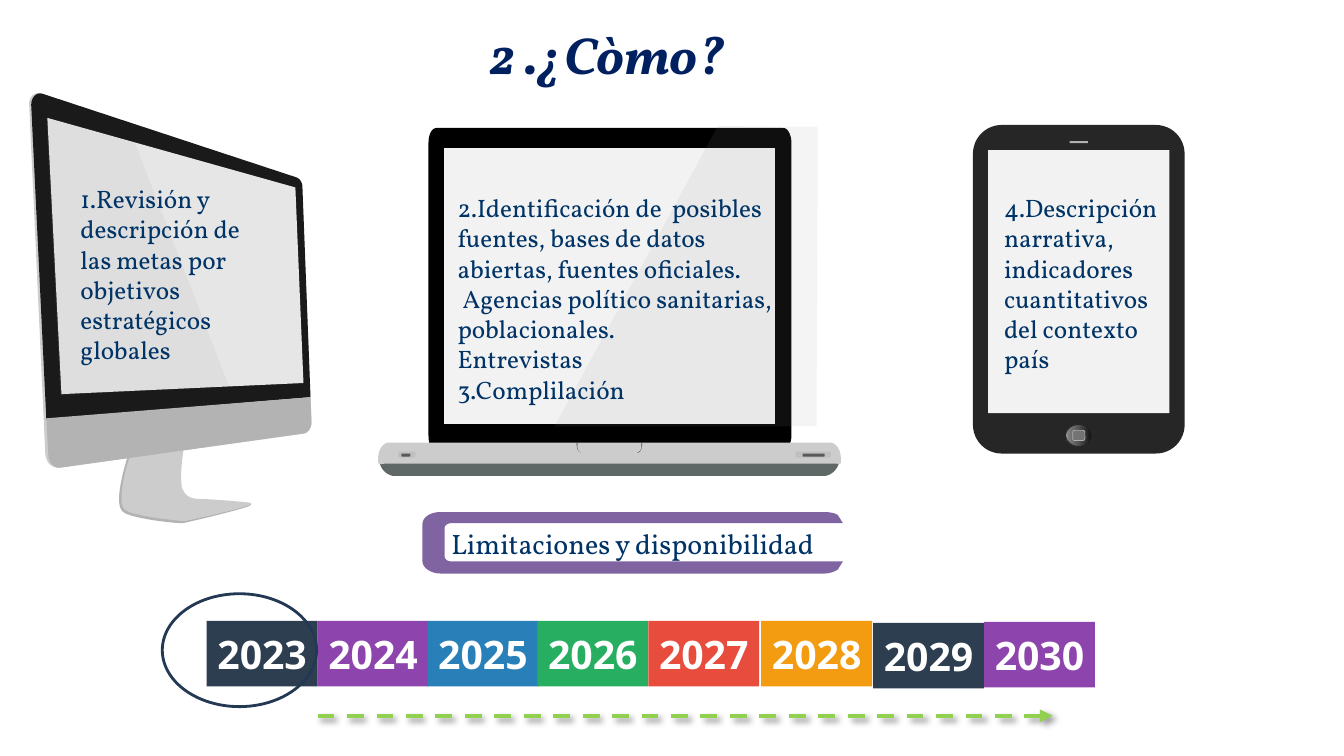
from copy import deepcopy
from pptx import Presentation
from pptx.dml.color import RGBColor
from pptx.enum.dml import MSO_LINE
from pptx.enum.shapes import MSO_CONNECTOR, MSO_SHAPE as SHAPE
from pptx.enum.text import MSO_ANCHOR as ANCHOR, MSO_AUTO_SIZE as AUTO, PP_ALIGN as ALIGN
from pptx.oxml import parse_xml
from pptx.oxml.ns import nsdecls, qn
from pptx.util import Inches, Pt

# Content
TITLE = "2 .¿Còmo?"
SERIF, SANS, NAVY = "Vollkorn", "Open Sans", "003366"
SCREENS = [  # box, paragraphs
    ((0.7, 1.77, 2.06, 1.92),
     ["1.Revisión y descripción de las metas por objetivos estratégicos globales"]),
    ((4.44, 1.86, 3.36, 2.22),
     ["2.Identificación de  posibles fuentes, bases de datos abiertas, fuentes oficiales.",
      " Agencias político sanitarias, poblacionales.", "Entrevistas", "3.Complilación"]),
    ((9.86, 1.86, 1.86, 1.92),
     ["4.Descripción narrativa, indicadores", "cuantitativos del contexto país"]),
]
YEARS = [  # year, fill, left, top
    ("2023", "2D3E50", 2.05, 6.16), ("2024", "8D44AD", 3.15, 6.16),
    ("2025", "297FB8", 4.24, 6.16), ("2026", "27AE61", 5.33, 6.16),
    ("2027", "E84C3D", 6.43, 6.16), ("2028", "F39C11", 7.55, 6.16),
    ("2029", "2D3E50", 8.66, 6.18), ("2030", "8D44AD", 9.76, 6.17),
]
BAND_TEXT = "Limitaciones y disponibilidad"
BAND = ("M 4.37 5.08 L 8.18 5.08 C 8.23 5.08 8.28 5.09 8.31 5.11 L 8.36 5.19 L 4.48 5.19 "
        "C 4.44 5.19 4.41 5.21 4.41 5.24 L 4.41 5.52 C 4.41 5.55 4.44 5.57 4.48 5.57 "
        "L 8.36 5.57 L 8.31 5.65 C 8.28 5.67 8.23 5.69 8.18 5.69 L 4.37 5.69 "
        "C 4.27 5.69 4.19 5.63 4.19 5.57 L 4.19 5.2 C 4.19 5.13 4.27 5.08 4.37 5.08")

# Device outlines in inches: M move, L line, C cubic curve
MONITOR = [  # outline, fill, opacity in percent
    ("M 1.8 4.46 C 1.78 4.62 1.77 4.71 1.78 4.8 C 1.78 4.83 1.78 4.85 1.8 4.88 "
     "C 1.83 4.95 1.91 4.97 1.95 4.97 C 2.1 4.97 2.41 4.99 2.46 4.99 "
     "C 2.46 4.99 2.5 4.99 2.49 5 L 2.49 5.01 C 2.47 5.04 1.91 5.17 1.82 5.19 "
     "C 1.81 5.19 1.8 5.19 1.79 5.19 C 1.71 5.19 1.26 5.14 1.21 5.07 "
     "C 1.14 4.99 1.21 4.72 1.26 4.55 C 1.24 4.53 1.51 4.49 1.8 4.46", "B3B3B3", 100),
    ("M 1.82 4.46 C 1.8 4.61 1.79 4.7 1.8 4.79 C 1.8 4.82 1.8 4.84 1.82 4.87 "
     "C 1.85 4.94 1.93 4.95 1.97 4.95 C 2.08 4.95 2.44 4.98 2.49 4.99 "
     "C 2.57 5.01 1.93 5.15 1.83 5.17 C 1.83 5.17 1.82 5.17 1.81 5.17 "
     "C 1.73 5.16 1.29 5.12 1.23 5.05 C 1.17 4.97 1.23 4.71 1.28 4.55 "
     "C 1.26 4.52 1.53 4.48 1.82 4.46", "CCCCCC", 100),
    ("M 0.58 4.64 L 3.02 4.3 C 3.06 4.29 3.09 4.24 3.09 4.19 L 3 1.95 "
     "C 2.99 1.81 2.97 1.77 2.93 1.76 L 0.39 0.93 C 0.34 0.91 0.28 0.97 0.29 1.04 "
     "L 0.45 4.51 C 0.46 4.59 0.51 4.64 0.58 4.64", "CCCCCC", 100),
    ("M 0.46 4.16 L 3.08 3.94 L 3 1.85 C 3 1.81 2.97 1.77 2.94 1.76 L 0.42 0.93 "
     "C 0.36 0.91 0.31 0.97 0.31 1.04 L 0.46 4.16", "1A1A1A", 100),
    ("M 0.61 3.91 L 3.01 3.8 L 2.93 1.86 L 0.47 1.17", "E6E6E6", 100),
    ("M 3.08 3.94 L 3.09 4.19 C 3.09 4.24 3.06 4.29 3.02 4.3 L 0.6 4.64 "
     "C 0.54 4.65 0.48 4.59 0.48 4.51 L 0.46 4.15", "B3B3B3", 100),
    ("M 1.34 1.42 L 0.46 1.17 L 0.6 3.92 L 2.27 3.83", "999999", 10),
]
LAPTOP = [
    ("M 8.19 4.72 C 8.19 4.72 8.28 4.71 8.32 4.6 C 8.32 4.57 8.3 4.54 8.27 4.54 "
     "L 3.82 4.56 C 3.79 4.56 3.77 4.58 3.77 4.61 C 3.8 4.69 3.86 4.71 3.89 4.72",
     "5F6767", 100),
    ("M 7.85 4.32 C 7.85 4.4 7.81 4.47 7.77 4.47 L 4.33 4.47 C 4.28 4.47 4.25 4.41 4.25 4.32 "
     "L 4.25 1.42 C 4.25 1.34 4.28 1.27 4.33 1.27 L 7.77 1.27 C 7.81 1.27 7.85 1.33 7.85 1.42",
     "000000", 100),
    ("M 4.4 1.47 L 7.69 1.47 L 7.69 4.21 L 4.4 4.21", "F2F2F2", 100),
    ("M 3.86 4.39 L 8.23 4.39 C 8.29 4.39 8.34 4.46 8.34 4.55 L 8.34 4.58 "
     "C 8.34 4.58 8.35 4.61 8.3 4.6 L 3.81 4.6 C 3.77 4.61 3.75 4.61 3.75 4.57 "
     "L 3.75 4.55 C 3.75 4.46 3.8 4.39 3.86 4.39", "CCCCCC", 100),
    ("M 6.36 4.39 L 6.37 4.39 C 6.37 4.47 6.34 4.49 6.33 4.49 L 6.32 4.49 "
     "C 6.35 4.48 6.37 4.46 6.36 4.39 M 5.72 4.39 L 5.73 4.39 "
     "C 5.73 4.39 5.71 4.47 5.76 4.49 C 5.71 4.47 5.72 4.39 5.72 4.39", "4D4D4D", 100),
]
LAPTOP_PORTS = [  # box, fill
    ((3.95, 4.48, 0.17, 0.06), "BFBFBF"), ((3.98, 4.5, 0.09, 0.03), "595959"),
    ((7.89, 4.48, 0.35, 0.06), "BFBFBF"), ((7.96, 4.5, 0.22, 0.03), "595959"),
]
LAPTOP_GLARE = ("M 7.12 1.25 L 8.11 1.26 C 8.11 2.24 8.1 3.25 8.1 4.23 L 5.5 4.23", "999999", 10)
BUTTON_STOPS = [(0, "0F0F0F"), (0.56, "595959"), (0.91, "808080"), (1, "BFBFBF")]


def rgb(color):
    return RGBColor.from_string(color)


def paint(sp, fill=None, opacity=100, line=None, width=0):
    sp.shadow.inherit = False
    if fill:
        sp.fill.solid()
        sp.fill.fore_color.rgb = rgb(fill)
        if opacity < 100:
            clr = sp._element.spPr.find(".//" + qn("a:srgbClr"))
            clr.append(parse_xml(f'<a:alpha {nsdecls("a")} val="{opacity * 1000}"/>'))
    else:
        sp.fill.background()
    if line:
        sp.line.color.rgb = rgb(line)
        sp.line.width = Pt(width)
    else:
        sp.line.fill.background()
    return sp


def preset(shapes, kind, box, fill=None, adj=None, **style):
    sp = shapes.add_shape(kind, *map(Inches, box))
    if adj is not None:
        sp.adjustments[0] = adj
    return paint(sp, fill, **style)


def trace(outline, steps=8):
    """Turn an outline into contours of points, with curves sampled evenly."""
    tokens, contours = iter(outline.split()), []
    for cmd in tokens:
        pts = [(float(next(tokens)), float(next(tokens))) for _ in range(3 if cmd == "C" else 1)]
        if cmd == "M":
            contours.append(pts)
        elif cmd == "L":
            contours[-1] += pts
        else:
            curve = [contours[-1][-1]] + pts
            for t in (i / steps for i in range(1, steps + 1)):
                w = ((1 - t) ** 3, 3 * t * (1 - t) ** 2, 3 * t * t * (1 - t), t ** 3)
                contours[-1].append(tuple(sum(k * p[a] for k, p in zip(w, curve)) for a in (0, 1)))
    return [[(Inches(x), Inches(y)) for x, y in c] for c in contours]


def free(shapes, outline, fill, opacity=100):
    contours = trace(outline)
    builder = shapes.build_freeform(*contours[0][0], scale=1.0)
    for i, pts in enumerate(contours):
        if i:
            builder.move_to(*pts[0])
        builder.add_line_segments(pts[1:], close=True)
    return paint(builder.convert_to_shape(), fill, opacity)


def write(sp, lines, size, font, color, align=ALIGN.LEFT, anchor=ANCHOR.TOP, bold=None):
    tf = sp.text_frame
    tf.word_wrap, tf.vertical_anchor = True, anchor
    for i, line in enumerate(lines):
        p = tf.add_paragraph() if i else tf.paragraphs[0]
        p.alignment = align
        r = p.add_run()
        r.text = line
        r.font.size, r.font.name, r.font.bold = Pt(size), font, bold
        r.font.color.rgb = rgb(color)
    return tf


prs = Presentation()
prs.slide_width, prs.slide_height = Inches(13.33), Inches(7.5)
slide = prs.slides.add_slide(prs.slide_layouts[5])
shapes = slide.shapes

# Title
title = shapes.title
title.left, title.top, title.width, title.height = map(Inches, (4.86, 0.17, 2.41, 0.66))
tf = write(title, [TITLE], 37.3, SERIF, "002060", bold=True)
tf.margin_left = tf.margin_right = tf.margin_top = tf.margin_bottom = 0
tf.auto_size = AUTO.SHAPE_TO_FIT_TEXT
p = tf.paragraphs[0]
p.line_spacing = Pt(48.5)
p.runs[0].font.italic = True
p.runs[0]._r.get_or_add_rPr().set("spc", "-40")

# Phone
phone = shapes.add_group_shape().shapes
preset(phone, SHAPE.ROUNDED_RECTANGLE, (9.65, 1.24, 2.1, 3.26), "262626", 0.136)
preset(phone, SHAPE.RECTANGLE, (10.61, 1.4, 0.18, 0.02), "B0B0B0")
button = preset(phone, SHAPE.OVAL, (10.57, 4.21, 0.26, 0.22), line="262626")
button.fill.gradient()
button.fill.gradient_angle = 180
gs_list = button._element.spPr.find(".//" + qn("a:gsLst"))
while len(gs_list) < len(BUTTON_STOPS):
    gs_list.append(deepcopy(gs_list[0]))
for stop, (position, color) in zip(button.fill.gradient_stops, BUTTON_STOPS):
    stop.position, stop.color.rgb = position, rgb(color)
preset(phone, SHAPE.ROUNDED_RECTANGLE, (10.64, 4.27, 0.12, 0.1), "737373", line="B0B0B0", width=0.5)
preset(phone, SHAPE.RECTANGLE, (9.8, 1.49, 1.8, 2.61), "F2F2F2")

# Monitor and laptop
monitor = shapes.add_group_shape().shapes
for part in MONITOR:
    free(monitor, *part)
laptop = shapes.add_group_shape().shapes
for part in LAPTOP:
    free(laptop, *part)
for box, fill in LAPTOP_PORTS:
    preset(laptop, SHAPE.ROUNDED_RECTANGLE, box, fill, 0.282)
free(laptop, *LAPTOP_GLARE)

# Screen texts
for box, lines in SCREENS:
    tb = shapes.add_textbox(*map(Inches, box))
    write(tb, lines, 18, SERIF, NAVY).auto_size = AUTO.SHAPE_TO_FIT_TEXT

# Timeline
for year, fill, left, top in YEARS:
    tile = preset(shapes, SHAPE.RECTANGLE, (left, top, 1.1, 0.65), fill)
    write(tile, [year], 28, SANS, "FFFFFF", ALIGN.CENTER, ANCHOR.MIDDLE, True)
band = free(shapes, BAND, "8064A2")
write(band, [BAND_TEXT], 20, SERIF, NAVY, ALIGN.CENTER, ANCHOR.MIDDLE)
preset(shapes, SHAPE.OVAL, (1.61, 5.89, 1.53, 1.12), line="233953", width=2)

# Dashed arrow with its shadow
arrow = shapes.add_connector(MSO_CONNECTOR.STRAIGHT, *map(Inches, (3.15, 7.1, 10.44, 7.1)))
arrow.line.color.rgb = rgb("92D050")
arrow.line.width, arrow.line.dash_style = Pt(3), MSO_LINE.DASH
arrow.line._get_or_add_ln().append(parse_xml(f'<a:tailEnd {nsdecls("a")} type="triangle"/>'))
arrow._element.spPr.append(parse_xml(
    f'<a:effectLst {nsdecls("a")}><a:outerShdw blurRad="{Pt(4)}" dist="{Pt(3)}" dir="2700000">'
    '<a:srgbClr val="000000"><a:alpha val="40000"/></a:srgbClr></a:outerShdw></a:effectLst>'))

prs.save("out.pptx")
